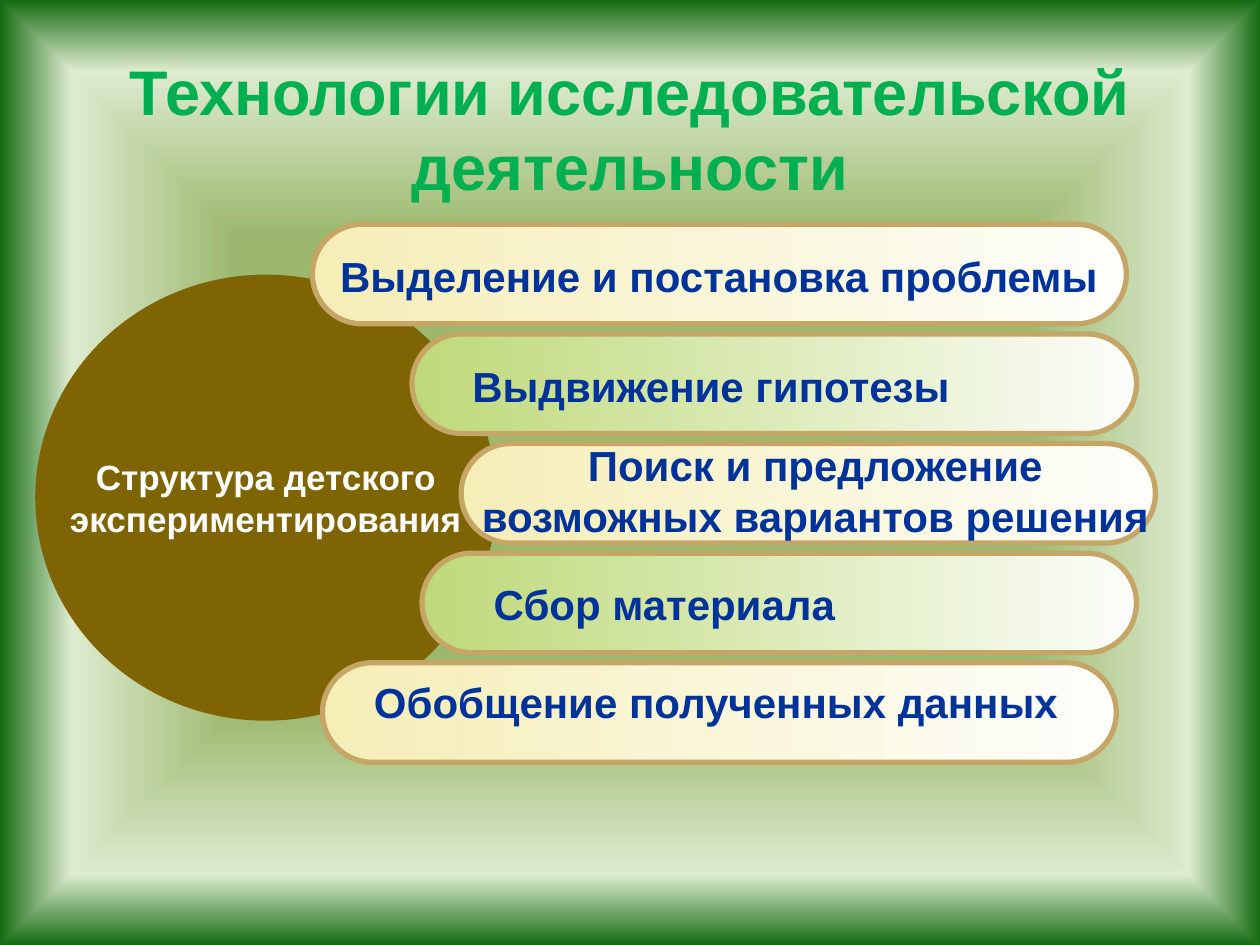
from dataclasses import dataclass

from pptx import Presentation
from pptx.dml.color import RGBColor
from pptx.enum.shapes import MSO_SHAPE
from pptx.enum.text import MSO_ANCHOR, PP_ALIGN
from pptx.oxml import parse_xml
from pptx.oxml.ns import nsdecls, qn
from pptx.util import Inches, Pt

ELLIPSE, PILL = MSO_SHAPE.OVAL, MSO_SHAPE.ROUNDED_RECTANGLE
LEFT, CENTER = PP_ALIGN.LEFT, PP_ALIGN.CENTER
TOP, MIDDLE = MSO_ANCHOR.TOP, MSO_ANCHOR.MIDDLE


@dataclass(frozen=True)
class Theme:
    font: str = "Arial"
    title: str = "00B050"
    step: str = "003399"
    hub: str = "7E6402"
    hub_text: str = "FFFFFF"
    border: str = "C5A667"
    cream: tuple = ("F5EEB7", "FEFEFB")
    green: tuple = ("BED979", "FCFDFA")
    background: tuple = ((0, "9CB86E"), (50, "9CB86E"), (85, "DDEBCF"), (100, "156B13"))
    title_size: int = 36
    step_size: int = 24
    hub_size: int = 20


@dataclass(frozen=True)
class Step:
    text: str
    left: float
    width: float
    text_left: float
    text_top: float
    text_width: float
    align: int = LEFT


THEME = Theme()
BAR_TOP, BAR_PITCH, BAR_HEIGHT = 1.78, 0.87, 0.79
STEPS = [
    Step("Выделение и постановка проблемы", 2.48, 6.46, 2.32, 1.94, 6.77, CENTER),
    Step("Выдвижение гипотезы", 3.27, 5.75, 3.65, 2.81, 5.13),
    Step("Поиск и предложение возможных вариантов решения",
         3.66, 5.51, 3.58, 3.44, 5.78, CENTER),
    Step("Сбор материала", 3.35, 5.67, 3.82, 4.54, 3.78),
    Step("Обобщение полученных данных", 2.56, 6.3, 2.87, 5.32, 6.56),
]


def rgb(color: str) -> RGBColor:
    return RGBColor.from_string(color)


def set_background(s) -> None:
    """Fill the slide with a gradient that runs from the centre to the edges."""
    fill = s.background.fill
    fill.gradient()
    stops = "".join(
        f'<a:gs pos="{pos * 1000}"><a:srgbClr val="{color}"/></a:gs>'
        for pos, color in THEME.background
    )
    grad = parse_xml(
        f'<a:gradFill {nsdecls("a")} rotWithShape="1"><a:gsLst>{stops}</a:gsLst>'
        '<a:path path="shape">'
        '<a:fillToRect l="50000" t="50000" r="50000" b="50000"/>'
        "</a:path></a:gradFill>"
    )
    old = next(s.element.iter(qn("a:gradFill")))
    old.getparent().replace(old, grad)


def write(sp, text: str, size: int, color: str, align: int, anchor: int,
          wrap: bool = True) -> None:
    tf = sp.text_frame
    tf.text = text
    tf.word_wrap = wrap
    tf.vertical_anchor = anchor
    for p in tf.paragraphs:
        p.alignment = align
        for r in p.runs:
            r.font.name = THEME.font
            r.font.size = Pt(size)
            r.font.bold = True
            r.font.color.rgb = rgb(color)


def add_text(s, left: float, top: float, width: float, height: float, text: str,
             size: int, color: str, align: int, anchor: int = TOP) -> None:
    sp = s.shapes.add_textbox(Inches(left), Inches(top), Inches(width), Inches(height))
    write(sp, text, size, color, align, anchor)


def add_hub(s) -> None:
    sp = s.shapes.add_shape(ELLIPSE, Inches(0.28), Inches(2.18), Inches(3.66), Inches(3.54))
    sp.shadow.inherit = False
    sp.fill.solid()
    sp.fill.fore_color.rgb = rgb(THEME.hub)
    sp.line.fill.background()
    write(sp, "Структура детского\nэкспериментирования", THEME.hub_size,
          THEME.hub_text, CENTER, MIDDLE, wrap=False)


def add_bar(s, step: Step, top: float, colors: tuple) -> None:
    sp = s.shapes.add_shape(PILL, Inches(step.left), Inches(top),
                            Inches(step.width), Inches(BAR_HEIGHT))
    sp.adjustments[0] = 0.5
    sp.shadow.inherit = False
    sp.fill.gradient()
    sp.fill.gradient_angle = 0
    for stop, position, color in zip(sp.fill.gradient_stops, (0, 1), colors):
        stop.position = position
        stop.color.rgb = rgb(color)
    sp.line.color.rgb = rgb(THEME.border)
    sp.line.width = Pt(3)


def main() -> None:
    prs = Presentation()
    prs.slide_width, prs.slide_height = Inches(10), Inches(7.5)
    s = prs.slides.add_slide(prs.slide_layouts[6])
    set_background(s)

    # Title
    add_text(s, 0, 0.6, 10, 0.83, "Технологии исследовательской деятельности",
             THEME.title_size, THEME.title, CENTER, MIDDLE)

    # Central circle and the bars fanning out of it
    add_hub(s)
    for i, step in enumerate(STEPS):
        add_bar(s, step, BAR_TOP + i * BAR_PITCH, (THEME.cream, THEME.green)[i % 2])

    # Bar captions
    for step in STEPS:
        add_text(s, step.text_left, step.text_top, step.text_width, 0.5, step.text,
                 THEME.step_size, THEME.step, step.align)

    prs.save("out.pptx")


if __name__ == "__main__":
    main()
